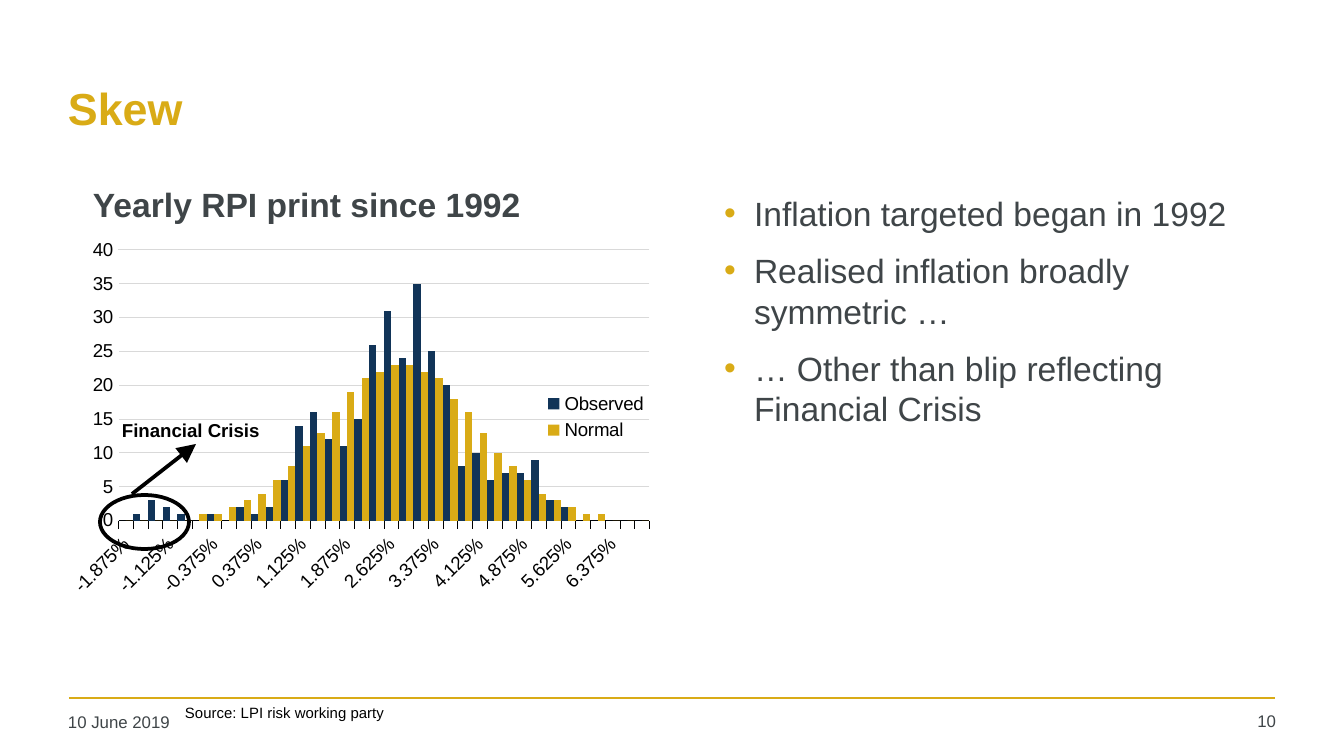
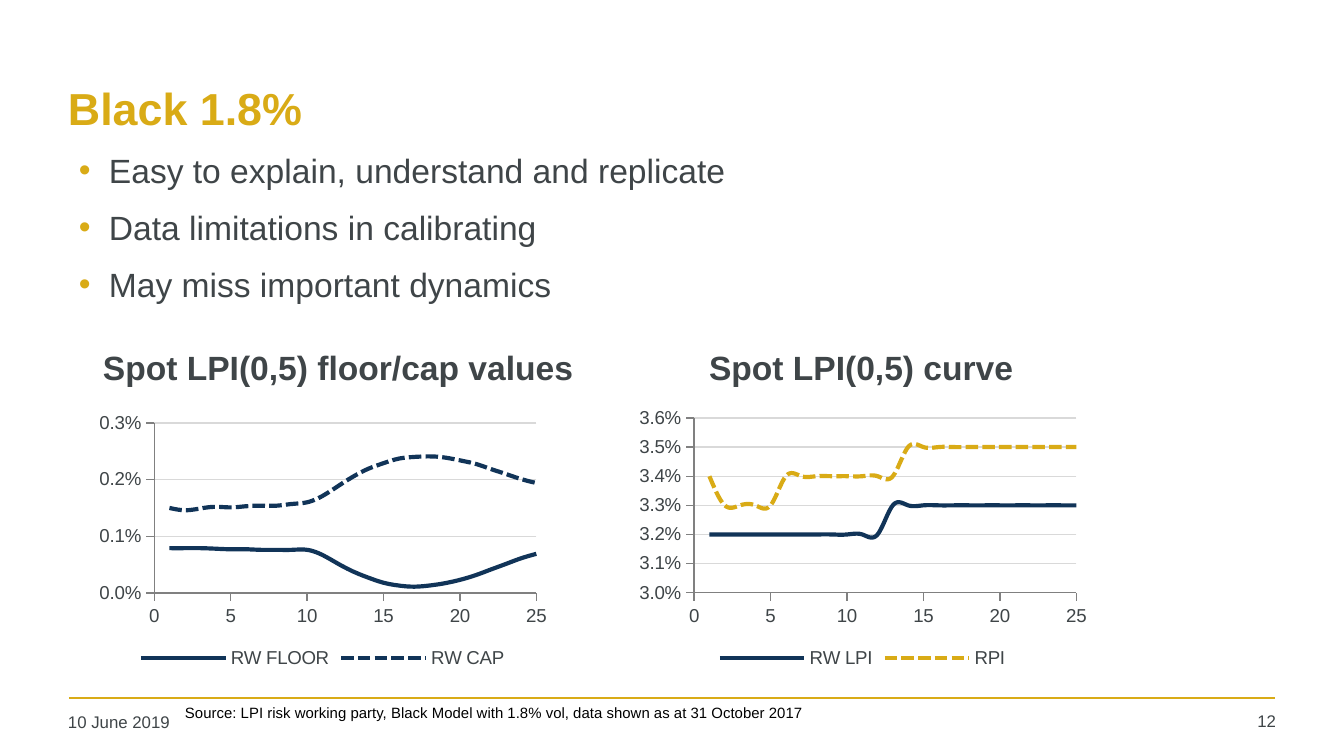
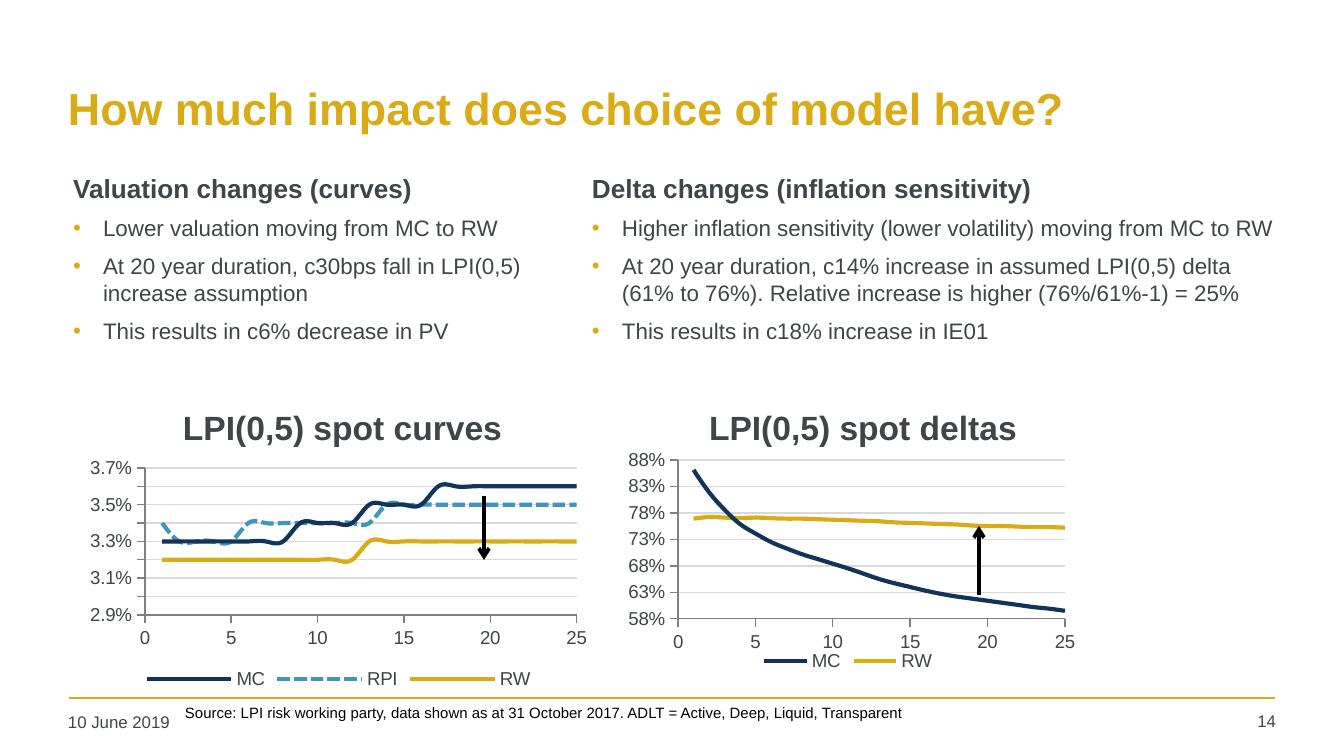
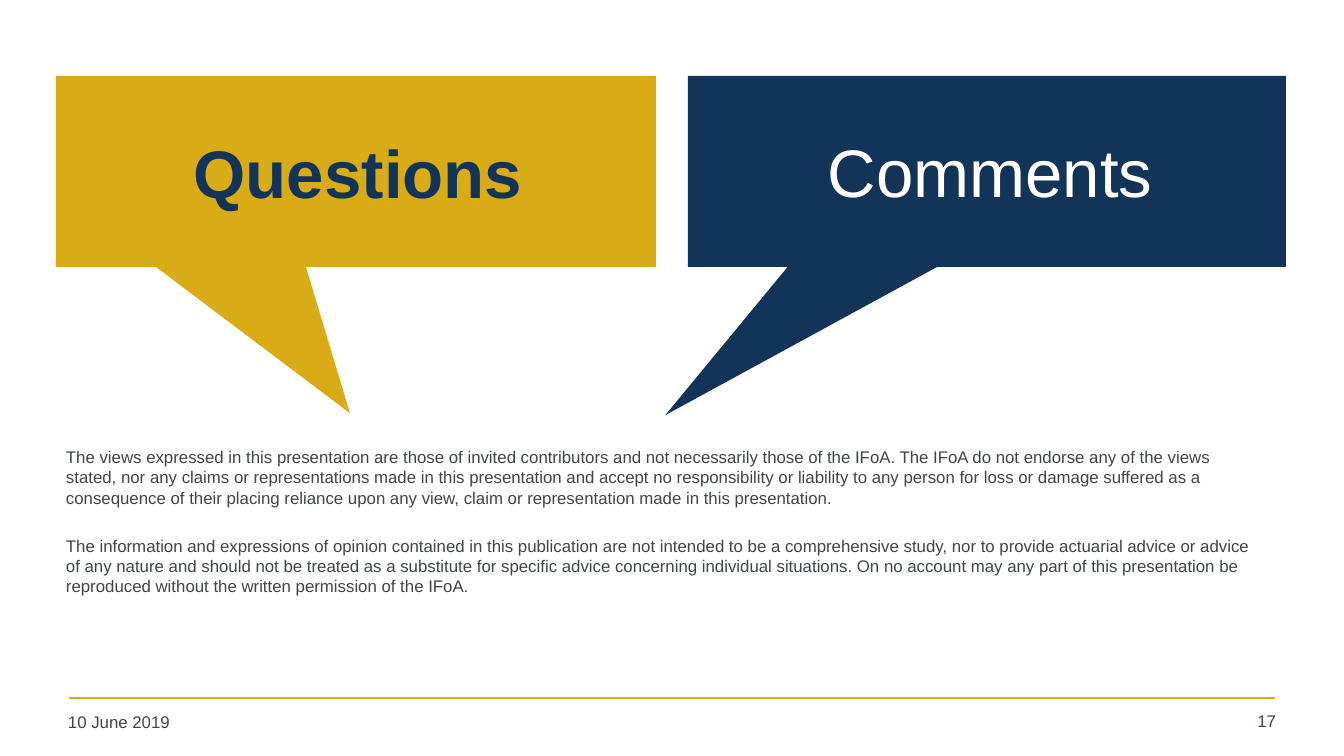
import pptx
import pptx.chart.data
import pptx.dml.color
import pptx.enum.chart
import pptx.enum.dml
import pptx.enum.shapes
import pptx.enum.text
import pptx.oxml
import pptx.oxml.ns
import pptx.util

# Shared look
PX = 914400 / 134.4
FONT = "Arial"
GOLD, NAVY, BLUE, GREY = "D9AB16", "113458", "4096B8", "3F4548"
BLACK, WHITE, GRID, AXIS = "000000", "FFFFFF", "D9D9D9", "808080"
TIGHT = (10, 5, 10, 5)
LOOSE = (13, 7, 13, 7)
DATE = "10 June 2019"

CHARTS = pptx.enum.chart
SHAPES = pptx.enum.shapes.MSO_SHAPE
ALIGN = pptx.enum.text.PP_ALIGN
MIDDLE = pptx.enum.text.MSO_ANCHOR.MIDDLE

# Chart data: counts, then floor and cap in 1/100000, the rest in 1/1000
OBSERVED = [0, 1, 3, 2, 1, 0, 1, 0, 2, 1, 2, 6, 14, 16, 12, 11, 15, 26,
            31, 24, 35, 25, 20, 8, 10, 6, 7, 7, 9, 3, 2, 0, 0, 0, 0, 0]
NORMAL = [0, 0, 0, 0, 0, 1, 1, 2, 3, 4, 6, 8, 11, 13, 16, 19, 21, 22,
          23, 23, 22, 21, 18, 16, 13, 10, 8, 6, 4, 3, 2, 1, 1, 0, 0, 0]
FLOOR = [79, 79, 79, 78, 77, 77, 76, 76, 76, 76, 67, 52, 38,
         27, 18, 13, 11, 13, 17, 23, 31, 41, 51, 61, 69]
CAP = [150, 146, 149, 152, 151, 153, 154, 154, 157, 160, 171, 188, 205,
       219, 229, 237, 240, 241, 239, 234, 228, 219, 210, 201, 194]
RW_CURVE = [32] * 12 + [33] * 13
RPI_CURVE = [34] + [33] * 4 + [34] * 8 + [35] * 12
MC_CURVE = [33] * 8 + [34] * 4 + [35] * 4 + [36] * 9
MC_DELTA = [861, 819, 786, 759, 741, 725, 713, 702, 693, 684, 675, 665, 655,
            647, 640, 633, 627, 622, 618, 614, 610, 606, 602, 599, 595]
RW_DELTA = [769, 772, 771, 770, 771, 770, 769, 769, 768, 767, 766, 765, 764,
            762, 761, 760, 759, 758, 756, 755, 755, 754, 753, 753, 752]


def px(length):
    return pptx.util.Emu(round(length * PX))


def color(hex_code):
    return pptx.dml.color.RGBColor.from_string(hex_code)


def add_xml(parent, tag, **attributes):
    child = parent.makeelement(pptx.oxml.ns.qn(tag), attributes)
    parent.append(child)
    return child


# Text
def format_font(font, size, fill=GREY, bold=False):
    font.name, font.size, font.bold = FONT, pptx.util.Pt(size), bold
    font.color.rgb = color(fill)


def fill_para(para, text, size=18, fill=GREY, bold=False, align=None,
              bullet=False, before=0, line=None):
    if bullet:
        props = para._p.get_or_add_pPr()
        props.set("marL", str(px(30)))
        props.set("indent", str(-px(30)))
        mark = add_xml(props, "a:buClr")
        add_xml(mark, "a:srgbClr", val=GOLD)
        add_xml(props, "a:buFont", typeface=FONT)
        add_xml(props, "a:buChar", char="•")
    if before:
        para.space_before = pptx.util.Pt(before)
    if line:
        para.line_spacing = pptx.util.Pt(line)
    para.alignment = align
    span = para.add_run()
    span.text = text
    format_font(span.font, size, fill, bold)


def add_box(page, at, margins=TIGHT, anchor=None, wrap=True):
    frame = page.shapes.add_textbox(*map(px, at)).text_frame
    frame.word_wrap = wrap
    frame.vertical_anchor = anchor
    (frame.margin_left, frame.margin_top,
     frame.margin_right, frame.margin_bottom) = map(px, margins)
    return frame


def add_text(page, text, at, margins=TIGHT, anchor=None, wrap=True, **style):
    frame = add_box(page, at, margins, anchor, wrap)
    fill_para(frame.paragraphs[0], text, **style)


def add_bullets(page, items, at, size=18, heading=None):
    frame = add_box(page, at)
    para = frame.paragraphs[0]
    if heading:
        fill_para(para, heading, size=14, bold=True)
    for index, item in enumerate(items):
        first = index == 0 and not heading
        if not first:
            para = frame.add_paragraph()
        fill_para(para, item, size=size, bullet=True, before=0 if first else size / 2)


def add_chart_title(page, text, left, top, width):
    add_text(page, text, (left, top, width, 54), LOOSE, wrap=False, bold=True)


def add_source(page, text, width=653):
    add_text(page, text, (185, 700, width, 28), (0, 7, 13, 7),
             size=8, fill=BLACK, line=8)


# Lines and shapes
def add_line(page, start, end, fill=BLACK, weight=2, head=None, head_size="med"):
    line = page.shapes.add_connector(
        pptx.enum.shapes.MSO_CONNECTOR.STRAIGHT, *map(px, start + end))
    line.line.color.rgb = color(fill)
    line.line.width = pptx.util.Pt(weight)
    if head:
        add_xml(line.line._get_or_add_ln(), "a:tailEnd",
                type=head, w=head_size, len=head_size)
    add_xml(line._element.spPr, "a:effectLst")


def add_ring(page, at):
    ring = page.shapes.add_shape(SHAPES.OVAL, *map(px, at))
    ring.shadow.inherit = False
    ring.fill.background()
    ring.line.color.rgb = color(BLACK)
    ring.line.width = pptx.util.Pt(2)


def add_callout(page, at, fill, tip):
    callout = page.shapes.add_shape(SHAPES.RECTANGULAR_CALLOUT, *map(px, at))
    callout.shadow.inherit = False
    callout.fill.solid()
    callout.fill.fore_color.rgb = color(fill)
    callout.line.fill.background()
    callout.adjustments[0], callout.adjustments[1] = tip


# Charts
def place_part(part, chart_at, part_at, inner=False):
    """Fix a plot area or legend at part_at, given in px on the slide."""
    left, top, width, height = chart_at
    x, y, w, h = part_at
    for old in part.findall(pptx.oxml.ns.qn("c:layout")):
        part.remove(old)
    layout = part.makeelement(pptx.oxml.ns.qn("c:layout"), {})
    part.insert(0 if inner else 1, layout)
    manual = add_xml(layout, "c:manualLayout")
    if inner:
        add_xml(manual, "c:layoutTarget", val="inner")
    add_xml(manual, "c:xMode", val="edge")
    add_xml(manual, "c:yMode", val="edge")
    shares = {"x": (x - left) / width, "y": (y - top) / height,
              "w": w / width, "h": h / height}
    for name, share in shares.items():
        add_xml(manual, "c:" + name, val=f"{share:.3f}")


def add_chart(page, kind, data, at, plot_at, legend, text_fill):
    chart = page.shapes.add_chart(kind, *map(px, at), data).chart
    format_font(chart.font, 10, text_fill)
    chart.has_title = False
    chart.has_legend = True
    chart.legend.position = legend
    chart.legend.include_in_layout = False
    format_font(chart.legend.font, 10, text_fill)
    chart.plots[0].vary_by_categories = False
    place_part(chart._chartSpace.chart.plotArea, at, plot_at, inner=True)
    return chart


def format_axis(axis, number_format, fill, weight, text_fill, tick, low, high, step, grid):
    axis.minimum_scale, axis.maximum_scale = low, high
    axis.major_unit = step
    axis.major_tick_mark = tick
    axis.minor_tick_mark = CHARTS.XL_TICK_MARK.NONE
    axis.has_major_gridlines = bool(grid)
    if grid:
        axis.major_gridlines.format.line.color.rgb = color(GRID)
        axis.major_gridlines.format.line.width = pptx.util.Pt(grid)
    axis.format.line.color.rgb = color(fill)
    axis.format.line.width = pptx.util.Pt(weight)
    axis.tick_labels.number_format = number_format
    axis.tick_labels.number_format_is_linked = False
    format_font(axis.tick_labels.font, 10, text_fill)


def add_histogram(page, at, plot_at):
    data = pptx.chart.data.CategoryChartData(number_format="General")
    data.categories = [round(-0.01875 + 0.0025 * i, 5) for i in range(len(OBSERVED))]
    data.categories.number_format = "0.000%"
    data.add_series("Observed", OBSERVED)
    data.add_series("Normal", NORMAL)
    chart = add_chart(page, CHARTS.XL_CHART_TYPE.COLUMN_CLUSTERED, data, at, plot_at,
                      CHARTS.XL_LEGEND_POSITION.RIGHT, BLACK)
    chart.legend.include_in_layout = True
    chart.plots[0].gap_width = 0
    chart.plots[0].overlap = 0
    for series, fill in zip(chart.plots[0].series, (NAVY, GOLD)):
        series.invert_if_negative = False
        series.format.fill.solid()
        series.format.fill.fore_color.rgb = color(fill)
    format_axis(chart.value_axis, "#,##0", WHITE, 0.25, BLACK,
                CHARTS.XL_TICK_MARK.NONE, 0, 40, 5, 0.5)

    # Slanted labels, every third one shown
    axis = chart.category_axis
    axis.has_major_gridlines = False
    axis.major_tick_mark = CHARTS.XL_TICK_MARK.OUTSIDE
    axis.tick_label_position = CHARTS.XL_TICK_LABEL_POSITION.LOW
    axis.tick_labels.number_format = "0.000%"
    axis.tick_labels.number_format_is_linked = False
    axis.format.line.color.rgb = color(BLACK)
    axis.format.line.width = pptx.util.Pt(0.25)
    format_font(axis.tick_labels.font, 10, BLACK)
    element = axis._element
    element.txPr.bodyPr.set("rot", "-2700000")
    skip = element.makeelement(pptx.oxml.ns.qn("c:tickLblSkip"), {"val": "3"})
    element.find(pptx.oxml.ns.qn("c:noMultiLvlLbl")).addprevious(skip)


def add_curves(page, curves, at, plot_at, unit, scale, number_format="0.0%", legend_at=None):
    """Draw curves of (name, values, colour, dashed) over years 1 to 25."""
    data = pptx.chart.data.XyChartData()
    for name, values, fill, dashed in curves:
        series = data.add_series(name)
        for year, value in enumerate(values, start=1):
            series.add_data_point(year, value / unit)
    chart = add_chart(page, CHARTS.XL_CHART_TYPE.XY_SCATTER_SMOOTH_NO_MARKERS, data, at,
                      plot_at, CHARTS.XL_LEGEND_POSITION.BOTTOM, GREY)
    for series, (name, values, fill, dashed) in zip(chart.plots[0].series, curves):
        series._element.find(pptx.oxml.ns.qn("c:smooth")).set("val", "1")
        series.marker.style = CHARTS.XL_MARKER_STYLE.NONE
        series.format.line.color.rgb = color(fill)
        series.format.line.width = pptx.util.Pt(2.25)
        if dashed:
            # SQUARE_DOT is sysDot, so the sysDash preset is set by name
            add_xml(series.format.line._get_or_add_ln(), "a:prstDash", val="sysDash")
    outside = CHARTS.XL_TICK_MARK.OUTSIDE
    format_axis(chart.category_axis, "General", AXIS, 0.75, GREY, outside, 0, 25, 5, None)
    format_axis(chart.value_axis, number_format, AXIS, 0.75, GREY, outside, *scale, 0.75)
    if legend_at:
        place_part(chart.legend._element, at, legend_at)


# Pages
def add_page(deck, number, title=None):
    page = deck.slides.add_slide(deck.slide_layouts[6])
    add_line(page, (69, 698), (1275, 698), GOLD, 1)
    if title:
        add_text(page, title, (58, 45, 1219, 126), anchor=MIDDLE,
                 size=24, fill=GOLD, bold=True)
    add_text(page, DATE, (58, 707, 296, 36), size=9)
    add_text(page, str(number), (1191, 706, 95, 38), size=9, align=ALIGN.RIGHT)
    return page


def build_skew(deck):
    page = add_page(deck, 10, "Skew")
    add_histogram(page, (58, 231, 603, 372), (118, 250, 531, 271))
    add_ring(page, (100, 495, 89, 54))
    add_text(page, "Financial Crisis", (109, 412, 171, 36), LOOSE,
             size=10, fill=BLACK, bold=True)
    add_line(page, (132, 494), (196, 444), head="triangle", head_size="lg")
    add_chart_title(page, "Yearly RPI print since 1992", 80, 177, 458)
    add_bullets(page, ["Inflation targeted began in 1992",
                       "Realised inflation broadly symmetric …",
                       "… Other than blip reflecting Financial Crisis"],
                (714, 188, 571, 488))
    add_source(page, "Source: LPI risk working party")


def build_black(deck):
    page = add_page(deck, 12, "Black 1.8%")
    add_bullets(page, ["Easy to explain, understand and replicate",
                       "Data limitations in calibrating",
                       "May miss important dynamics"], (69, 145, 710, 191))
    add_chart_title(page, "Spot LPI(0,5) floor/cap values", 90, 340, 503)
    add_curves(page, [("RW FLOOR", FLOOR, NAVY, False), ("RW CAP", CAP, NAVY, True)],
               (90, 407, 465, 267), (154, 423, 382, 170), 100000, (0, 0.003, 0.001))
    add_chart_title(page, "Spot LPI(0,5) curve", 696, 340, 335)
    add_curves(page, [("RW LPI", RW_CURVE, NAVY, False), ("RPI", RPI_CURVE, GOLD, True)],
               (630, 402, 465, 272), (694, 418, 382, 175), 1000, (0.03, 0.036, 0.001))
    add_source(page, "Source: LPI risk working party, Black Model with 1.8% vol, "
                     "data shown as at 31 October 2017")


def build_impact(deck):
    page = add_page(deck, 14, "How much impact does choice of model have?")
    add_bullets(page, ["Lower valuation moving from MC to RW",
                       "At 20 year duration, c30bps fall in LPI(0,5) increase assumption",
                       "This results in c6% decrease in PV"],
                (63, 167, 551, 191), 12, "Valuation changes (curves)")
    add_bullets(page, ["Higher inflation sensitivity (lower volatility) moving from MC to RW",
                       "At 20 year duration, c14% increase in assumed LPI(0,5) delta "
                       "(61% to 76%). Relative increase is higher (76%/61%-1) = 25%",
                       "This results in c18% increase in IE01"],
                (582, 167, 714, 191), 12, "Delta changes (inflation sensitivity)")
    add_chart_title(page, "LPI(0,5) spot curves", 170, 400, 349)
    add_chart_title(page, "LPI(0,5) spot deltas", 696, 400, 339)
    add_curves(page, [("MC", MC_CURVE, NAVY, False), ("RPI", RPI_CURVE, BLUE, True),
                      ("RW", RW_CURVE, GOLD, False)],
               (79, 452, 519, 243), (145, 468, 432, 147), 1000, (0.029, 0.037, 0.001))
    add_curves(page, [("MC", MC_DELTA, NAVY, False), ("RW", RW_DELTA, GOLD, False)],
               (620, 444, 465, 257), (678, 460, 387, 159), 1000, (0.58, 0.88, 0.05),
               "0%", legend_at=(757, 649, 182, 24))
    add_line(page, (484, 496), (484, 560), head="arrow")
    add_line(page, (979, 595), (979, 526), head="arrow")
    add_source(page, "Source: LPI risk working party, data shown as at 31 October 2017. "
                     "ADLT = Active, Deep, Liquid, Transparent", 784)


def build_questions(deck):
    page = add_page(deck, 17)
    frame = add_box(page, (56, 442, 1212, 259))
    fill_para(frame.paragraphs[0],
              "The views expressed in this presentation are those of invited contributors "
              "and not necessarily those of the IFoA. The IFoA do not endorse any of the "
              "views stated, nor any claims or representations made in this presentation "
              "and accept no responsibility or liability to any person for loss or damage "
              "suffered as a consequence of their placing reliance upon any view, claim or "
              "representation made in this presentation.", size=9)
    fill_para(frame.add_paragraph(),
              "The information and expressions of opinion contained in this publication are "
              "not intended to be a comprehensive study, nor to provide actuarial advice or "
              "advice of any nature and should not be treated as a substitute for specific "
              "advice concerning individual situations. On no account may any part of this "
              "presentation be reproduced without the written permission of the IFoA.",
              size=9, before=15)
    add_callout(page, (56, 76, 600, 191), GOLD, (-0.01, 1.266))
    add_callout(page, (688, 76, 598, 191), NAVY, (-0.538, 1.276))
    add_text(page, "Questions", (84, 109, 548, 126), anchor=MIDDLE,
             size=36, fill=NAVY, bold=True, align=ALIGN.CENTER)
    add_text(page, "Comments", (712, 108, 556, 126), anchor=MIDDLE,
             size=36, fill=WHITE, align=ALIGN.CENTER)


def main():
    deck = pptx.Presentation()
    deck.slide_width, deck.slide_height = px(1344), px(756)
    build_skew(deck)
    build_black(deck)
    build_impact(deck)
    build_questions(deck)
    deck.save("out.pptx")


if __name__ == "__main__":
    main()
